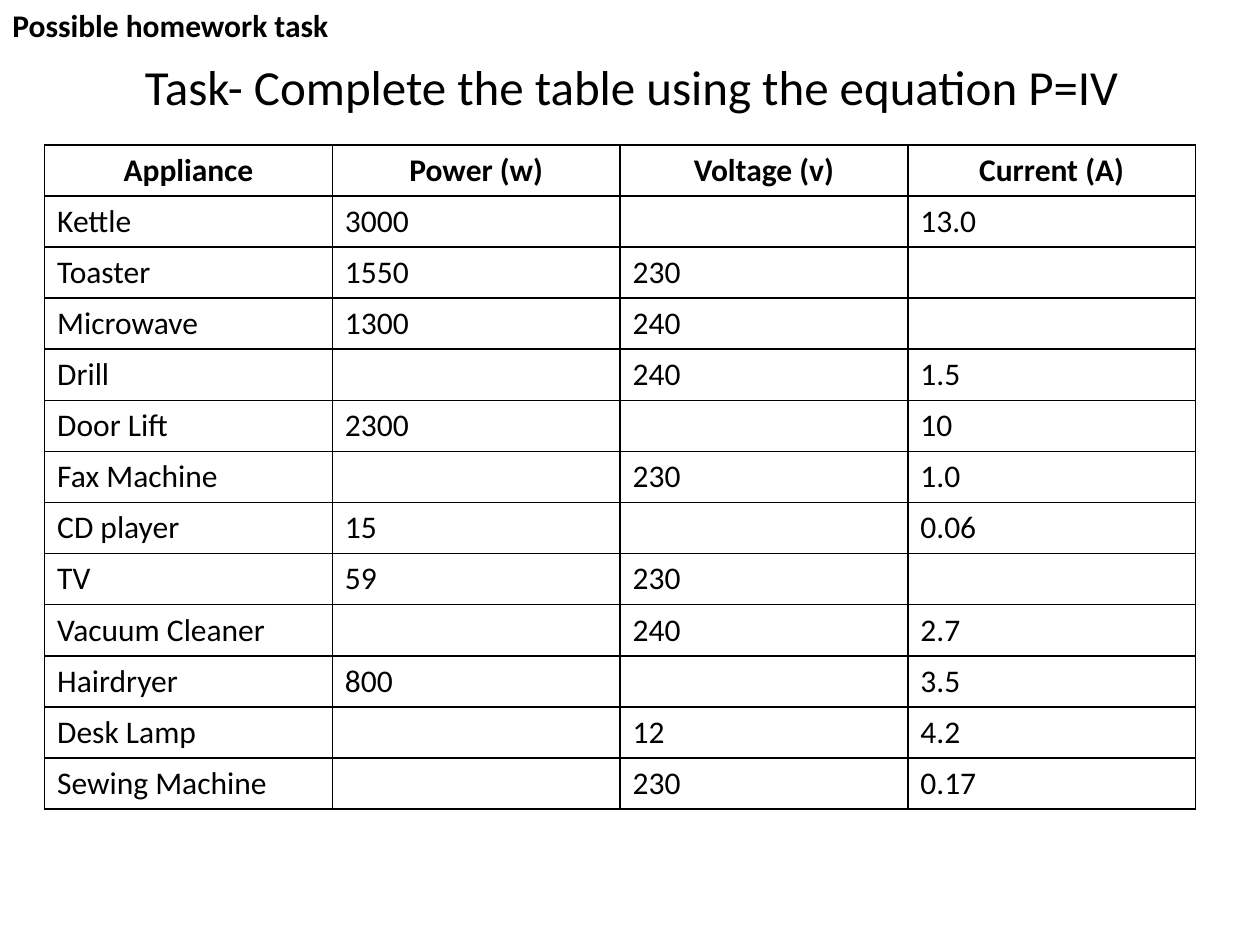
"""Build a homework slide with a table to complete using P=IV."""
from dataclasses import dataclass

from lxml.etree import SubElement
from pptx import Presentation
from pptx.dml.color import RGBColor
from pptx.enum.text import MSO_ANCHOR, PP_ALIGN
from pptx.oxml.ns import qn
from pptx.slide import Slide
from pptx.table import _Cell
from pptx.text.text import TextFrame
from pptx.util import Cm, Pt

COLOURS = {"text": "000000", "border": "000000", "background": "FFFFFF"}
FONT = "Calibri"
HEADERS = ("Appliance", "Power (w)", "Voltage (v)", "Current (A)")
COLUMN_WIDTH = 5.8
ROW_HEIGHT = 1.03


@dataclass(frozen=True)
class Appliance:
    """One table row, with an empty value where the pupil must answer."""

    name: str
    power: str = ""
    voltage: str = ""
    current: str = ""

    def values(self) -> tuple[str, ...]:
        """Return the cell texts in column order."""
        return self.name, self.power, self.voltage, self.current


@dataclass(frozen=True)
class Box:
    """A rectangle measured in centimetres."""

    left: float
    top: float
    width: float
    height: float

    def lengths(self) -> tuple[Cm, ...]:
        """Return the position and size as slide lengths."""
        return Cm(self.left), Cm(self.top), Cm(self.width), Cm(self.height)


APPLIANCES = (
    Appliance("Kettle", power="3000", current="13.0"),
    Appliance("Toaster", power="1550", voltage="230"),
    Appliance("Microwave", power="1300", voltage="240"),
    Appliance("Drill", voltage="240", current="1.5"),
    Appliance("Door Lift", power="2300", current="10"),
    Appliance("Fax Machine", voltage="230", current="1.0"),
    Appliance("CD player", power="15", current="0.06"),
    Appliance("TV", power="59", voltage="230"),
    Appliance("Vacuum Cleaner", voltage="240", current="2.7"),
    Appliance("Hairdryer", power="800", current="3.5"),
    Appliance("Desk Lamp", voltage="12", current="4.2"),
    Appliance("Sewing Machine", voltage="230", current="0.17"),
)


def write_text(
    frame: TextFrame,
    text: str,
    *,
    size: float = 18,
    bold: bool = False,
    align: PP_ALIGN = PP_ALIGN.LEFT,
) -> None:
    """Write one formatted paragraph into a text frame."""
    paragraph = frame.paragraphs[0]
    paragraph.alignment = align
    run = paragraph.add_run()
    run.text = text
    run.font.name = FONT
    run.font.size = Pt(size)
    run.font.bold = bold
    run.font.color.rgb = RGBColor.from_string(COLOURS["text"])


def add_text_box(slide: Slide, box: Box, anchor: MSO_ANCHOR) -> TextFrame:
    """Add a wrapping text box and return its text frame."""
    frame = slide.shapes.add_textbox(*box.lengths()).text_frame
    frame.word_wrap = True
    frame.vertical_anchor = anchor
    return frame


def style_cell(cell: _Cell) -> None:
    """Give a cell a plain fill and a thin border on every side."""
    properties = cell._tc.get_or_add_tcPr()
    for side in ("a:lnL", "a:lnR", "a:lnT", "a:lnB"):
        line = SubElement(properties, qn(side), w=str(Pt(1)))
        fill = SubElement(line, qn("a:solidFill"))
        SubElement(fill, qn("a:srgbClr"), val=COLOURS["border"])
    cell.fill.solid()
    cell.fill.fore_color.rgb = RGBColor.from_string(COLOURS["background"])


def add_appliance_table(slide: Slide, left: float, top: float) -> None:
    """Add the bordered table of appliances."""
    rows = [HEADERS, *(appliance.values() for appliance in APPLIANCES)]
    box = Box(left, top, COLUMN_WIDTH * len(HEADERS), ROW_HEIGHT * len(rows))
    table = slide.shapes.add_table(len(rows), len(HEADERS), *box.lengths()).table
    table.horz_banding = False
    for column in table.columns:
        column.width = Cm(COLUMN_WIDTH)
    for row_index, values in enumerate(rows):
        table.rows[row_index].height = Cm(ROW_HEIGHT)
        is_header = row_index == 0
        align = PP_ALIGN.CENTER if is_header else PP_ALIGN.LEFT
        for column_index, text in enumerate(values):
            cell = table.cell(row_index, column_index)
            style_cell(cell)
            if text:
                write_text(cell.text_frame, text, bold=is_header, align=align)


def main() -> None:
    """Create and save the presentation."""
    presentation = Presentation()
    presentation.slide_width = Cm(25.4)
    presentation.slide_height = Cm(19.05)
    slide = presentation.slides.add_slide(presentation.slide_layouts[6])

    title = add_text_box(slide, Box(1.3, 0.53, 22.86, 2.41), MSO_ANCHOR.MIDDLE)
    write_text(
        title,
        "Task- Complete the table using the equation P=IV",
        size=28,
        align=PP_ALIGN.CENTER,
    )
    add_appliance_table(slide, left=0.9, top=2.92)
    label = add_text_box(slide, Box(0, 0, 9.1, 1.02), MSO_ANCHOR.TOP)
    write_text(label, "Possible homework task", bold=True)

    presentation.save("out.pptx")


if __name__ == "__main__":
    main()
